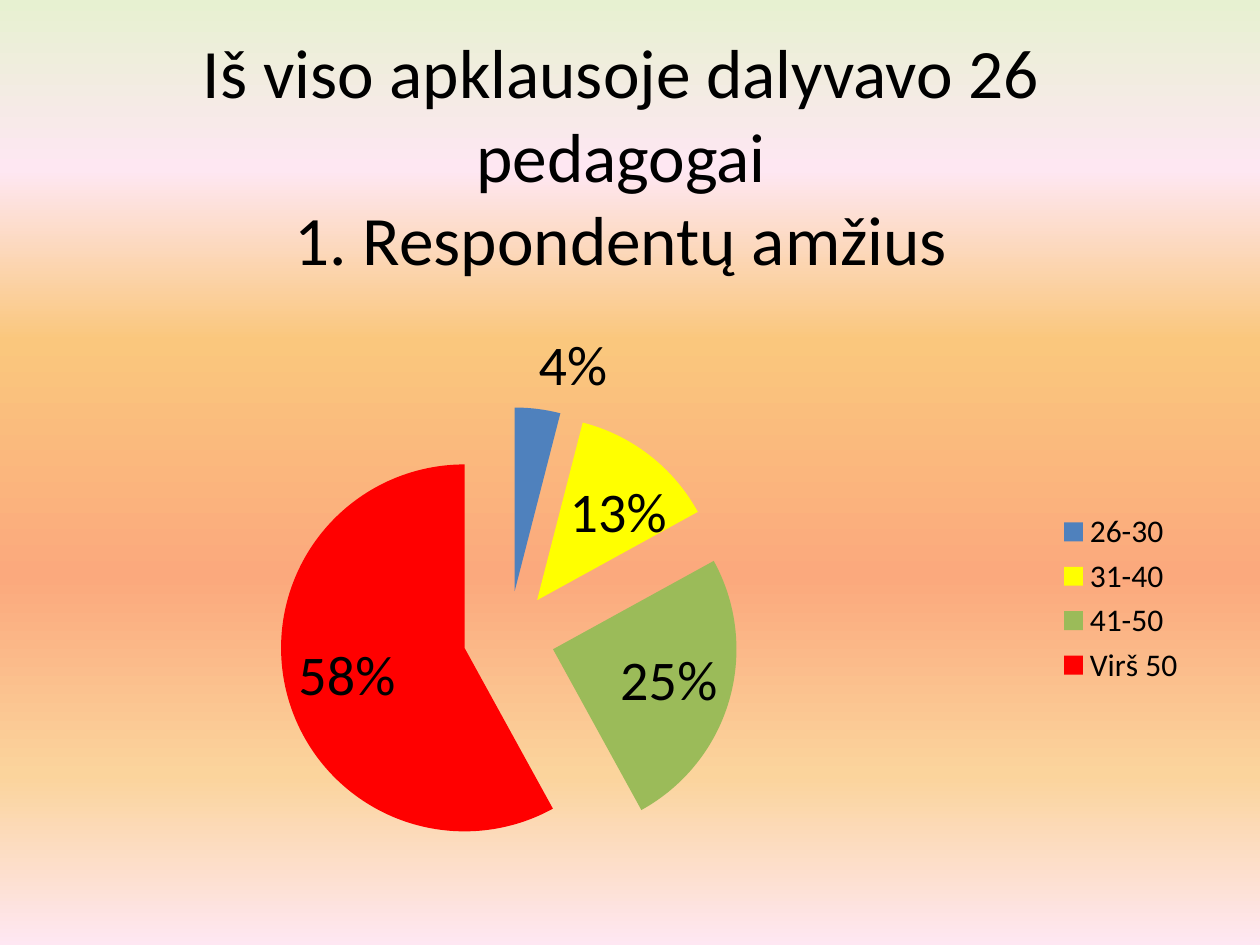
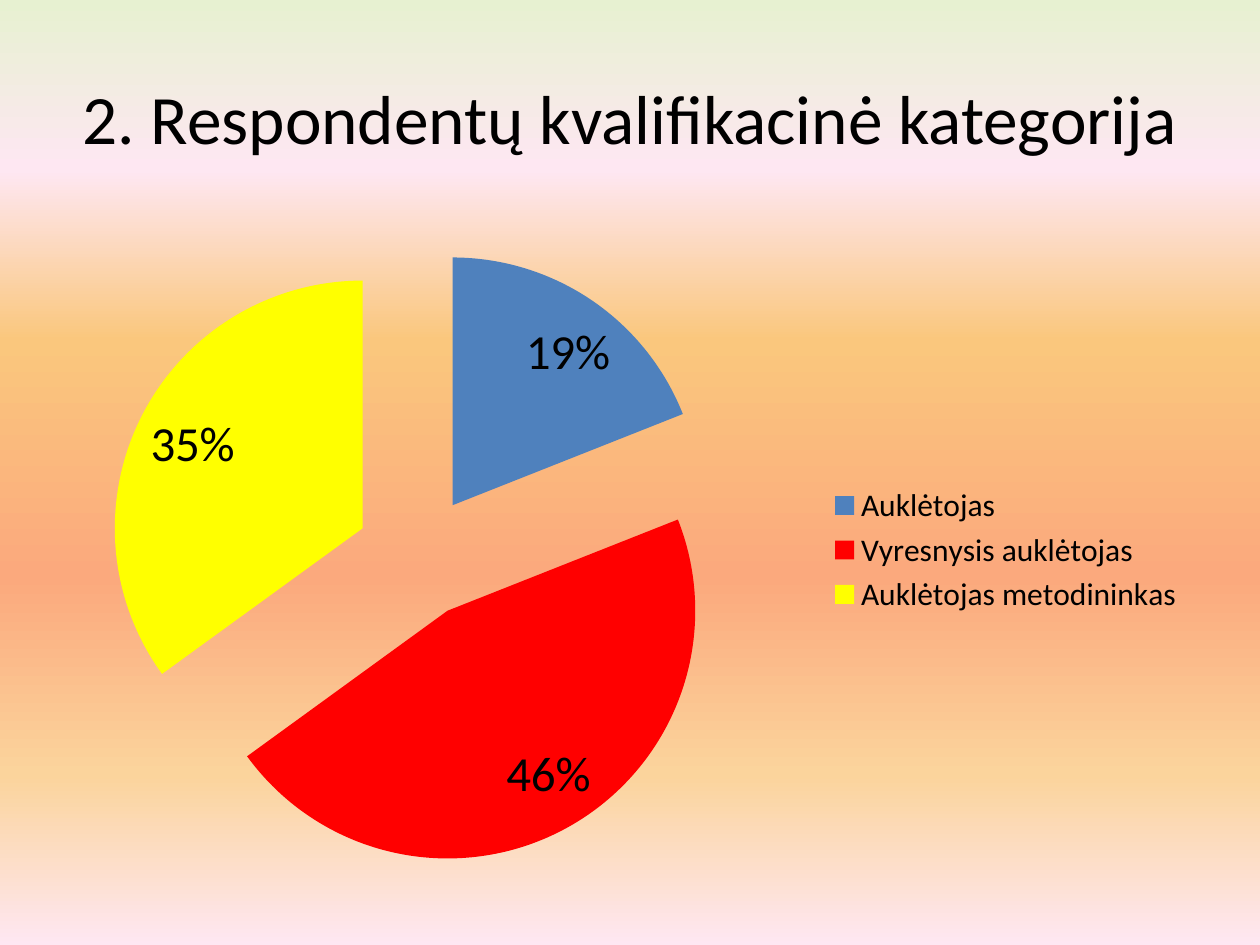
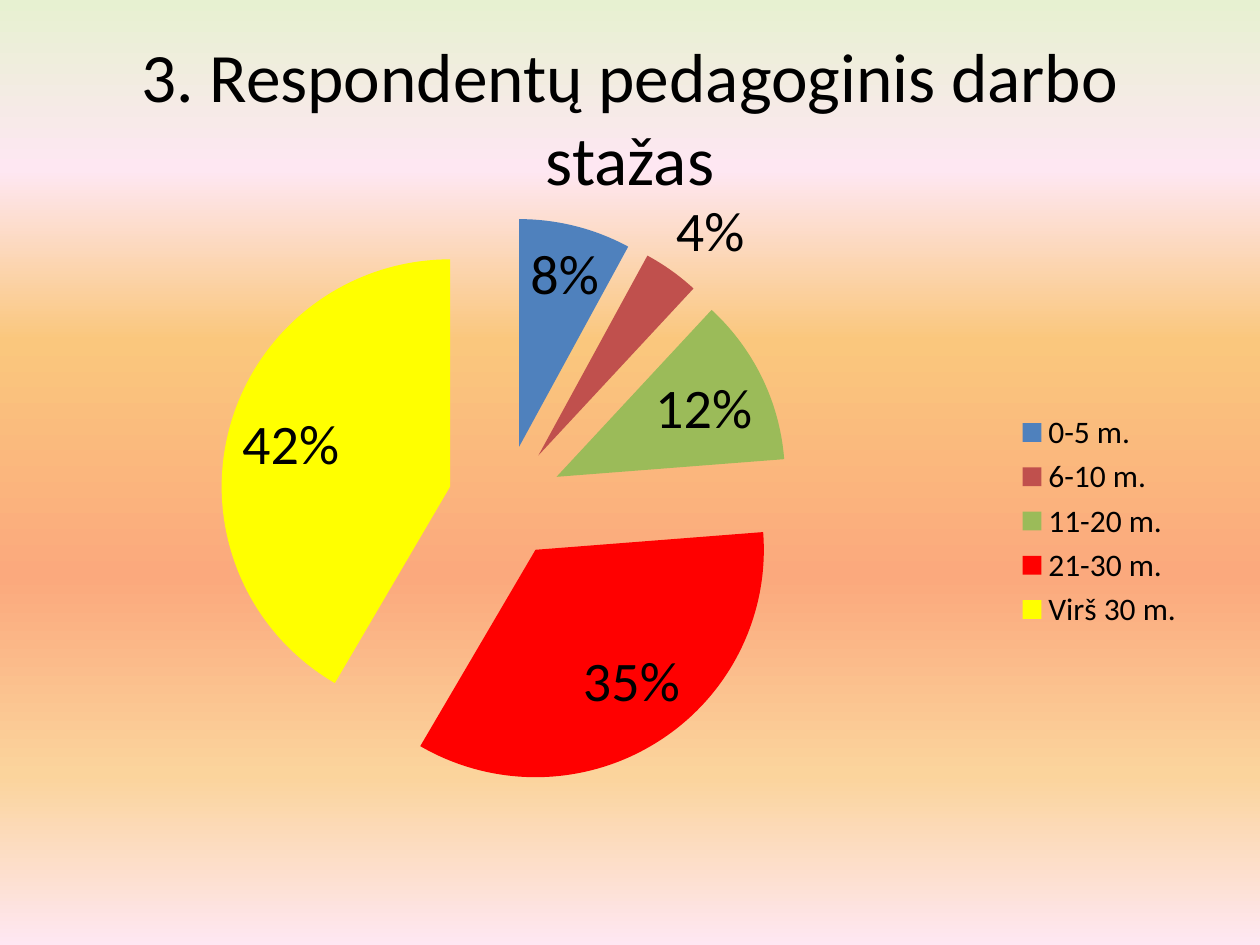
from lxml.etree import SubElement
from pptx import Presentation
from pptx.chart.data import CategoryChartData
from pptx.dml.color import RGBColor
from pptx.enum.chart import XL_CHART_TYPE, XL_LABEL_POSITION, XL_LEGEND_POSITION
from pptx.enum.text import MSO_ANCHOR, PP_ALIGN
from pptx.oxml import parse_xml
from pptx.oxml.ns import nsdecls, qn
from pptx.util import Inches, Pt

FONT = "Calibri"
BLACK = RGBColor(0x00, 0x00, 0x00)
BLUE = RGBColor(0x4F, 0x81, 0xBD)
YELLOW = RGBColor(0xFF, 0xFF, 0x00)
GREEN = RGBColor(0x9B, 0xBB, 0x59)
RED = RGBColor(0xFF, 0x00, 0x00)
BRICK = RGBColor(0xC0, 0x50, 0x4D)
PALE_GREEN = RGBColor(0xE7, 0xF1, 0xD1)
PALE_PINK = RGBColor(0xFE, 0xE7, 0xF2)
AMBER = RGBColor(0xFA, 0xC7, 0x7D)
SALMON = RGBColor(0xFB, 0xA9, 0x7D)
SAND = RGBColor(0xFB, 0xD4, 0x9C)

BACKGROUND_STOPS = [(0, PALE_GREEN), (18, PALE_PINK), (36, AMBER),
                    (61, SALMON), (82, SAND), (100, PALE_PINK)]
EXPLOSION = 25

# Boxes are left, top, width, height in inches; plot areas are shares of the chart.
SURVEY = [
    {
        "title": "Iš viso apklausoje dalyvavo 26 pedagogai\n1. Respondentų amžius",
        "title_box": (0.43, 0.6, 9, 1.25),
        "chart_box": (0.51, 2.49, 9, 4.52),
        "plot_area": None,
        "label_size": 32,
        "answers": [("26-30", 4, BLUE), ("31-40", 13, YELLOW),
                    ("41-50", 25, GREEN), ("Virš 50", 58, RED)],
    },
    {
        "title": "2. Respondentų kvalifikacinė kategorija",
        "title_box": (0.5, 0.3, 9, 1.25),
        "chart_box": (0.2, 1.75, 9.3, 5.23),
        "plot_area": (0.01, 0.04, 0.65, 0.94),
        "label_size": 28,
        "answers": [("Auklėtojas", 19, BLUE), ("Vyresnysis auklėtojas", 46, RED),
                    ("Auklėtojas metodininkas", 35, YELLOW)],
    },
    {
        "title": "3. Respondentų pedagoginis darbo stažas",
        "title_box": (0.5, 0.3, 9, 1.25),
        "chart_box": (0.35, 1.55, 9.15, 5.15),
        "plot_area": (0.02, 0.03, 0.76, 0.88),
        "label_size": 32,
        "answers": [("0-5 m.", 8, BLUE), ("6-10 m.", 4, BRICK), ("11-20 m.", 12, GREEN),
                    ("21-30 m.", 35, RED), ("Virš 30 m.", 42, YELLOW)],
    },
]


def add_text(slide, text, box, size=39.6, color=BLACK, align=PP_ALIGN.CENTER,
             anchor=MSO_ANCHOR.MIDDLE):
    frame = slide.shapes.add_textbox(*map(Inches, box)).text_frame
    frame.word_wrap = True
    frame.vertical_anchor = anchor
    paragraph = frame.paragraphs[0]
    paragraph.text = text
    paragraph.alignment = align
    for run in paragraph.runs:
        run.font.name = FONT
        run.font.size = Pt(size)
        run.font.color.rgb = color


presentation = Presentation()
presentation.slide_width = Inches(10)
presentation.slide_height = Inches(7.5)

# Shared background: a vertical gradient on the master
master = presentation.slide_master
background = master.background.fill
background.gradient()
background.gradient_angle = 270
stop_list = master.element.find(".//" + qn("a:gsLst"))
for old_stop in list(stop_list):
    stop_list.remove(old_stop)
for position, color in BACKGROUND_STOPS:
    stop = SubElement(stop_list, qn("a:gs"), pos=str(position * 1000))
    SubElement(stop, qn("a:srgbClr"), val=str(color))

for question in SURVEY:
    slide = presentation.slides.add_slide(presentation.slide_layouts[6])
    add_text(slide, question["title"], question["title_box"])

    categories, values, colors = zip(*question["answers"])
    chart_data = CategoryChartData()
    chart_data.categories = categories
    chart_data.add_series("Series 1", values)
    chart = slide.shapes.add_chart(
        XL_CHART_TYPE.PIE, *map(Inches, question["chart_box"]), chart_data).chart
    chart.has_title = False
    chart.font.name = FONT
    chart.font.size = Pt(18)
    chart.font.color.rgb = BLACK
    chart.has_legend = True
    chart.legend.position = XL_LEGEND_POSITION.RIGHT
    chart.legend.include_in_layout = False

    plot = chart.plots[0]
    plot.vary_by_categories = True
    plot.has_data_labels = True
    labels = plot.data_labels
    labels.show_value = False
    labels.show_percentage = True
    labels.number_format = "0%"
    labels.number_format_is_linked = False
    labels.position = XL_LABEL_POSITION.BEST_FIT
    labels.font.name = FONT
    labels.font.size = Pt(question["label_size"])
    labels.font.color.rgb = BLACK

    series = plot.series[0]
    series_name = chart.element.find(".//" + qn("c:ser") + "/" + qn("c:tx"))
    series_name.addnext(parse_xml(f'<c:explosion {nsdecls("c")} val="{EXPLOSION}"/>'))
    for index, color in enumerate(colors):
        fill = series.points[index].format.fill
        fill.solid()
        fill.fore_color.rgb = color

    if question["plot_area"]:
        plot_area = chart.element.find(".//" + qn("c:plotArea"))
        for old_layout in plot_area.findall(qn("c:layout")):
            plot_area.remove(old_layout)
        layout = parse_xml(f'<c:layout {nsdecls("c")}><c:manualLayout/></c:layout>')
        plot_area.insert(0, layout)
        settings = [("layoutTarget", "inner"), ("xMode", "edge"), ("yMode", "edge"),
                    *zip("xywh", question["plot_area"])]
        for name, value in settings:
            SubElement(layout[0], qn(f"c:{name}"), val=str(value))

presentation.save("out.pptx")
